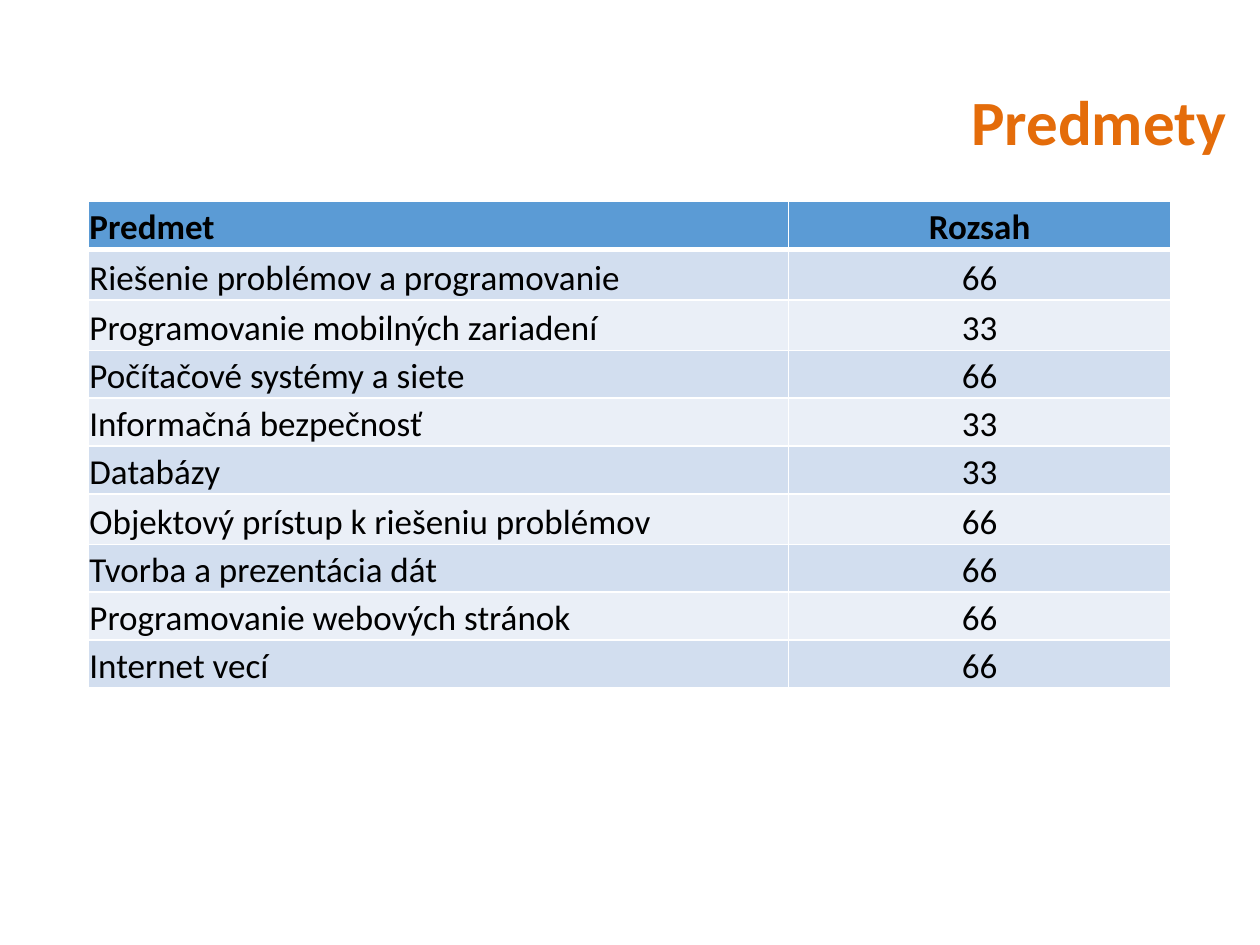
"""Build the slide listing the subjects and their extent."""
from lxml import etree
from pptx import Presentation, util as u
from pptx.dml.color import RGBColor
from pptx.enum import text
from pptx.oxml.ns import qn

TITLE = "Predmety"
HEADER = ("Predmet", "Rozsah")
SUBJECTS = [
    ("Riešenie problémov a programovanie", 66),
    ("Programovanie mobilných zariadení", 33),
    ("Počítačové systémy a siete", 66),
    ("Informačná bezpečnosť", 33),
    ("Databázy", 33),
    ("Objektový prístup k riešeniu problémov", 66),
    ("Tvorba a prezentácia dát", 66),
    ("Programovanie webových stránok", 66),
    ("Internet vecí", 66),
]
COLORS = {"title": "E46C0A", "text": "000000", "header": "5B9BD5",
          "odd": "D2DEEF", "even": "EAEFF7", "border": "FFFFFF"}
FONT = "Calibri"
WIDTH, HEIGHT = 10, 7.5
COLUMNS = (5.56, 3.03)
ROW, TALL_ROW, TALL_ROWS = 0.38, 0.4, {1, 2, 6}
ALIGNMENTS = (text.PP_ALIGN.LEFT, text.PP_ALIGN.CENTER)


def write(frame, words, size, color, bold, alignment):
    paragraph = frame.paragraphs[0]
    paragraph.alignment = alignment
    run = paragraph.add_run()
    run.text = str(words)
    run.font.name, run.font.size, run.font.bold = FONT, u.Pt(size), bold
    run.font.color.rgb = RGBColor.from_string(COLORS[color])
    return paragraph


def add_borders(cell, widths):
    properties = cell._tc.get_or_add_tcPr()
    for side, width in widths.items():
        line = etree.SubElement(properties, qn(f"a:ln{side}"), w=str(u.Pt(width)))
        fill = etree.SubElement(line, qn("a:solidFill"))
        etree.SubElement(fill, qn("a:srgbClr"), val=COLORS["border"])


def add_title(slide):
    title = slide.shapes.add_textbox(
        u.Inches(3.22), u.Inches(0.67), u.Inches(6.61), u.Inches(0.64))
    frame = title.text_frame
    frame.word_wrap = True
    frame.vertical_anchor = text.MSO_ANCHOR.MIDDLE
    write(frame, TITLE, 36, "title", True, text.PP_ALIGN.RIGHT).line_spacing = 0.9


def add_subjects(slide):
    rows = [HEADER, *SUBJECTS]
    heights = [TALL_ROW if r in TALL_ROWS else ROW for r in range(len(rows))]
    table = slide.shapes.add_table(
        len(rows), len(COLUMNS), u.Inches(0.7), u.Inches(1.6),
        u.Inches(sum(COLUMNS)), u.Inches(sum(heights))).table
    for column, width in zip(table.columns, COLUMNS):
        column.width = u.Inches(width)
    for r, (row, height) in enumerate(zip(rows, heights)):
        table.rows[r].height = u.Inches(height)
        band = "header" if r == 0 else "odd" if r % 2 else "even"
        for c, words in enumerate(row):
            cell = table.cell(r, c)
            cell.margin_left = cell.margin_right = cell.margin_top = u.Inches(0.01)
            cell.margin_bottom = 0
            cell.vertical_anchor = text.MSO_ANCHOR.BOTTOM
            add_borders(cell, {"L": 1, "R": 1, "T": 3 if r == 1 else 1,
                               "B": 3 if r == 0 else 1})
            cell.fill.solid()
            cell.fill.fore_color.rgb = RGBColor.from_string(COLORS[band])
            write(cell.text_frame, words, 20, "text", r == 0, ALIGNMENTS[c])


def main():
    deck = Presentation()
    deck.slide_width, deck.slide_height = u.Inches(WIDTH), u.Inches(HEIGHT)
    slide = deck.slides.add_slide(deck.slide_layouts[6])
    add_title(slide)
    add_subjects(slide)
    deck.save("out.pptx")


if __name__ == "__main__":
    main()
